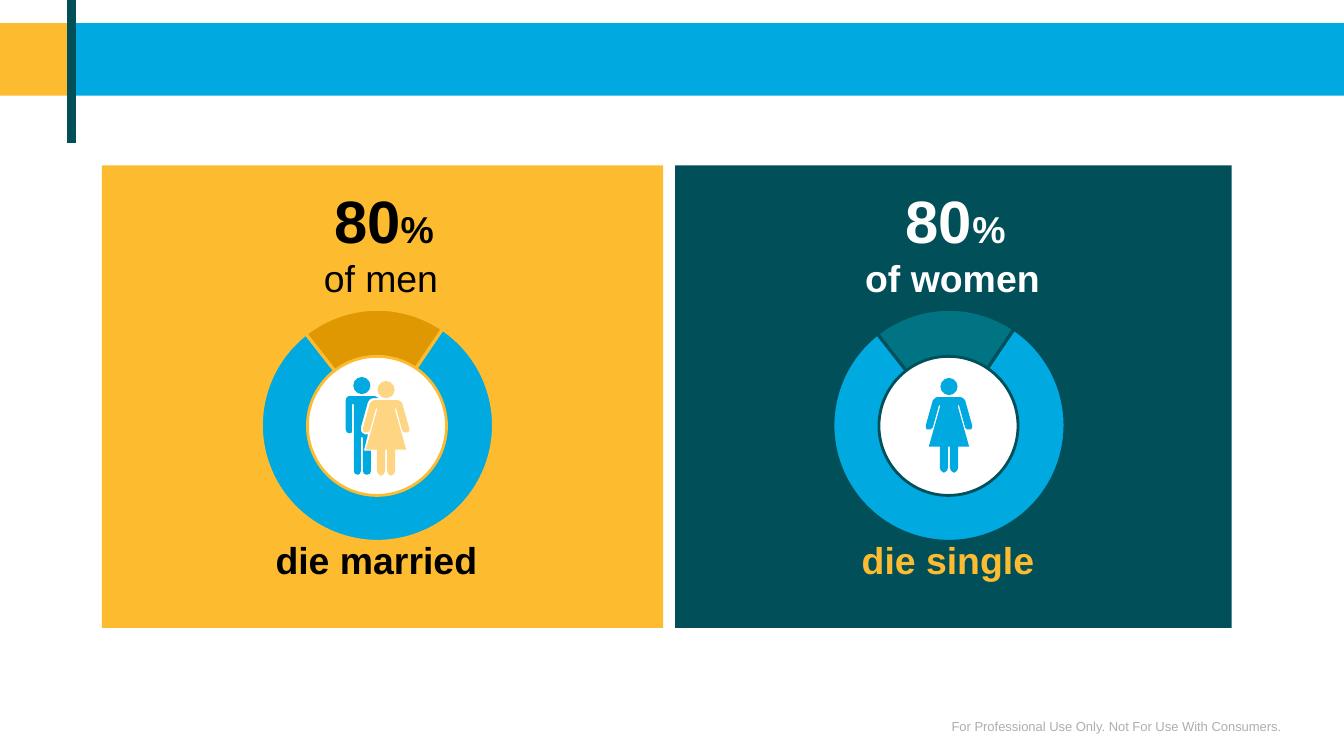
from pptx import Presentation
from pptx.chart.data import CategoryChartData
from pptx.dml.color import RGBColor
from pptx.enum.chart import XL_CHART_TYPE
from pptx.enum.shapes import MSO_CONNECTOR, MSO_SHAPE
from pptx.enum.text import MSO_AUTO_SIZE, PP_ALIGN
from pptx.oxml.ns import qn
from pptx.util import Inches, Pt
from lxml.etree import SubElement

BLUE = RGBColor(0x00, 0xA9, 0xE0)
YELLOW = RGBColor(0xFD, 0xBB, 0x30)
TEAL = RGBColor(0x00, 0x4F, 0x59)
OCHRE = RGBColor(0xE0, 0x98, 0x02)
SEA = RGBColor(0x00, 0x74, 0x83)
PALE = RGBColor(0xFE, 0xD6, 0x83)
GREY = RGBColor(0xAD, 0xAF, 0xAF)
BLACK = RGBColor(0, 0, 0)
WHITE = RGBColor(255, 255, 255)

COLUMNS, ROWS = 160, 90
LARGE, MEDIUM, SMALL = 42.7, 26.7, 9.3

WOMAN_RIGHT = [
    (9, 0), (12, 0), (14, 1), (16, 3), (23, 28), (23, 30), (22, 31.5), (20, 32),
    (18, 32), (16, 30), (10, 8), (9, 8), (9, 10), (20, 49), (9, 49), (9, 70),
    (8, 73), (5, 75), (2, 73), (1, 70), (1, 49),
]
WOMAN = WOMAN_RIGHT + [(-x, y) for x, y in reversed(WOMAN_RIGHT)]
MAN = [
    (6, 38), (3, 38), (0, 36), (-1, 34), (-1, 31), (6, 6), (8, 3), (11, 2),
    (16, 2), (15, 1), (13, 0), (-13, 0), (-15, 1), (-16, 4), (-16, 33),
    (-15, 36), (-12.5, 37), (-10, 36), (-9.5, 33), (-9.5, 8), (-8.5, 8),
    (-8.5, 74), (-7, 77), (-4, 78), (-2, 77), (-1, 74), (-1, 41), (1, 41),
    (1, 74), (2, 77), (5, 78), (8, 77), (9, 74), (9, 54), (2, 54),
]


class Canvas:
    font = "Arial"

    def __init__(self, deck):
        self.shapes = deck.slides.add_slide(deck.slide_layouts[6]).shapes
        self.column = deck.slide_width / COLUMNS
        self.row = deck.slide_height / ROWS
        self.icon_scale = deck.slide_height / 750

    def place(self, left, top, width, height):
        return (round(left * self.column), round(top * self.row),
                round(width * self.column), round(height * self.row))

    def paint(self, shape, fill, outline=None):
        shape.shadow.inherit = False
        shape.fill.solid()
        shape.fill.fore_color.rgb = fill
        if outline is None:
            shape.line.fill.background()
        else:
            shape.line.color.rgb = outline
            shape.line.width = Pt(2)

    def block(self, left, top, width, height, fill):
        area = self.place(left, top, width, height)
        self.paint(self.shapes.add_shape(MSO_SHAPE.RECTANGLE, *area), fill)

    def disc(self, centre, top, diameter, fill, outline=None):
        area = self.place(centre - diameter / 2, top, diameter, diameter)
        self.paint(self.shapes.add_shape(MSO_SHAPE.OVAL, *area), fill, outline)

    def rule(self, column, top, bottom, color):
        x, start, _, length = self.place(column, top, 0, bottom - top)
        rule = self.shapes.add_connector(
            MSO_CONNECTOR.STRAIGHT, x, start, x, start + length)
        rule.line.color.rgb = color
        rule.line.width = Pt(6)
        SubElement(rule._element.spPr, qn("a:effectLst"))

    def figure(self, centre, top, outline, fill):
        self.disc(centre, top - 2.28, 2.04, fill)
        builder = self.shapes.build_freeform(*outline[0], scale=self.icon_scale)
        builder.add_line_segments(outline[1:], close=True)
        x, y, _, _ = self.place(centre, top, 0, 0)
        self.paint(builder.convert_to_shape(x, y), fill)

    def text(self, left, top, width, height, lines, color, align, wrap=False):
        frame = self.shapes.add_textbox(
            *self.place(left, top, width, height)).text_frame
        frame.word_wrap = wrap
        frame.auto_size = MSO_AUTO_SIZE.SHAPE_TO_FIT_TEXT
        for index, line in enumerate(lines):
            paragraph = frame.add_paragraph() if index else frame.paragraphs[0]
            paragraph.alignment = align
            for wording, size, bold in line:
                run = paragraph.add_run()
                run.text = wording
                run.font.name = self.font
                run.font.size = Pt(size)
                run.font.bold = bold
                run.font.color.rgb = color

    def ring(self, centre, top, width, height, remainder, gap):
        shares = CategoryChartData()
        shares.categories = ["1", "2"]
        shares.add_series("Series 1", (80, 20))
        chart = self.shapes.add_chart(
            XL_CHART_TYPE.DOUGHNUT,
            *self.place(centre - width / 2, top, width, height), shares).chart
        chart.has_legend = False
        chart.has_title = False
        chart.font.name = self.font
        chart.font.size = Pt(18)
        chart.font.color.rgb = BLACK
        plot = chart.plots[0]
        plot.vary_by_categories = True
        for index, color in enumerate((BLUE, remainder)):
            style = plot.series[0].points[index].format
            style.fill.solid()
            style.fill.fore_color.rgb = color
            style.line.color.rgb = gap
            style.line.width = Pt(2.25)
        doughnut = chart._chartSpace.find(".//" + qn("c:doughnutChart"))
        doughnut.find(qn("c:firstSliceAng")).set("val", "34")
        doughnut.find(qn("c:holeSize")).set("val", "50")

    def panel(self, left, centre, fill, remainder, group, group_bold, group_width,
              group_color, outcome, outcome_width, outcome_color):
        self.block(left, 19.68, 66.84, 55.08, fill)
        self.ring(centre, 35.16, 46.44, 30.96, remainder, fill)
        headline = [[(" ", LARGE, False), ("80", LARGE, True), ("% ", MEDIUM, True)],
                    [(group, MEDIUM, group_bold)]]
        self.text(centre + 0.42 - group_width / 2, 21.24, group_width, 15.24,
                  headline, group_color, PP_ALIGN.CENTER)
        self.text(centre - outcome_width / 2, 63.36, outcome_width, 6.6,
                  [[(outcome, MEDIUM, True)]], outcome_color, PP_ALIGN.LEFT)
        self.disc(centre - 0.06, 42.42, 16.56, WHITE, fill)


def main():
    deck = Presentation()
    deck.slide_width, deck.slide_height = Inches(13.33), Inches(7.5)
    canvas = Canvas(deck)

    canvas.block(8.52, 2.76, COLUMNS - 8.52, 8.64, BLUE)
    canvas.block(0, 2.76, 8.52, 8.64, YELLOW)
    canvas.rule(8.52, 0, 17.04, TEAL)

    men, women = 44.94, 112.98
    canvas.panel(12.12, men, YELLOW, OCHRE, "of men", False, 17.64, BLACK,
                 "die married", 26.64, BLACK)
    canvas.figure(43.08, 47.16, MAN, BLUE)
    canvas.figure(45.96, 47.64, WOMAN, PALE)

    canvas.panel(79.8, women, TEAL, SEA, "of women", True, 23.4, WHITE,
                 "die single", 23.16, YELLOW)
    canvas.figure(women, 47.28, WOMAN, BLUE)
    canvas.rule(79.8, 17.28, 74.76, WHITE)

    notice = "For Professional Use Only. Not For Use With Consumers."
    canvas.text(73.68, 84.96, 80.04, 3.12, [[(notice, SMALL, False)]],
                GREY, PP_ALIGN.RIGHT, wrap=True)
    deck.save("out.pptx")


if __name__ == "__main__":
    main()
